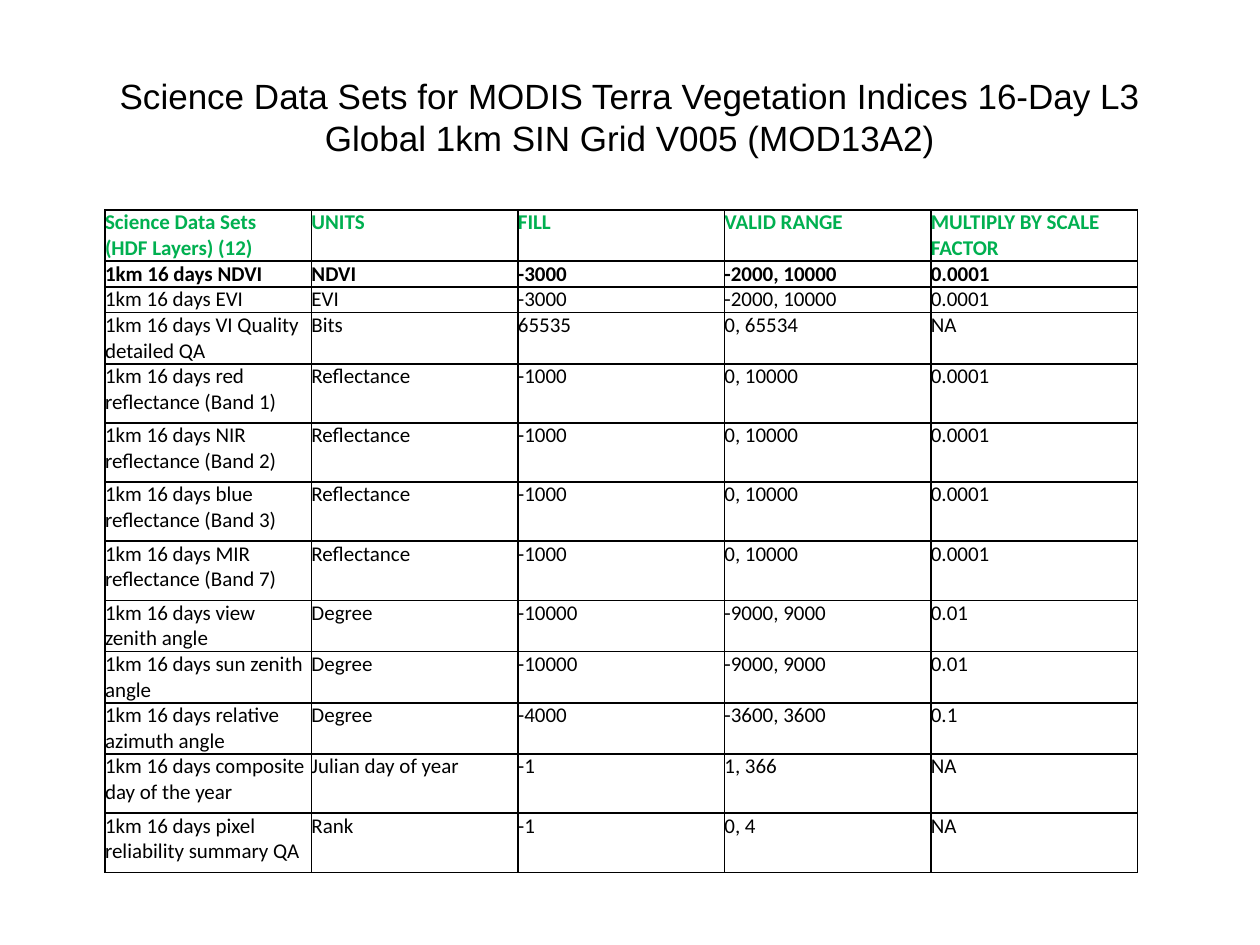
from lxml import etree
from pptx import Presentation
from pptx.dml.color import RGBColor
from pptx.enum.text import MSO_ANCHOR, PP_ALIGN
from pptx.oxml.ns import qn
from pptx.util import Pt

BLACK = RGBColor(0x00, 0x00, 0x00)
GREEN = RGBColor(0x00, 0xB0, 0x50)
LEFT, CENTER = PP_ALIGN.LEFT, PP_ALIGN.CENTER
TOP, MIDDLE = MSO_ANCHOR.TOP, MSO_ANCHOR.MIDDLE

TITLE = ("Science Data Sets for MODIS Terra Vegetation Indices 16-Day L3 "
         "Global 1km SIN Grid V005 (MOD13A2)")
HEAD = ("Science Data Sets\n(HDF Layers) (12)", "UNITS", "FILL",
        "VALID RANGE", "MULTIPLY BY SCALE FACTOR")
SHORT, MID, TALL = 14.4, 24.5, 33.8
BANDS = [(TALL, f"{name} reflectance (Band {band})", "Reflectance",
          "-1000", "0, 10000", "0.0001")
         for name, band in (("red", 1), ("NIR", 2), ("blue", 3), ("MIR", 7))]
LAYERS = [
    (SHORT, "NDVI", "NDVI", "-3000", "-2000, 10000", "0.0001"),
    (SHORT, "EVI", "EVI", "-3000", "-2000, 10000", "0.0001"),
    (MID, "VI Quality detailed QA", "Bits", "65535", "0, 65534", "NA"),
    *BANDS,
    (MID, "view zenith angle", "Degree", "-10000", "-9000, 9000", "0.01"),
    (MID, "sun zenith angle", "Degree", "-10000", "-9000, 9000", "0.01"),
    (MID, "relative azimuth angle", "Degree", "-4000", "-3600, 3600", "0.1"),
    (TALL, "composite day of the year", "Julian day of year", "-1", "1, 366", "NA"),
    (TALL, "pixel reliability summary QA", "Rank", "-1", "0, 4", "NA"),
]


def write(frame, text, font="Calibri", size=12, color=BLACK, bold=False, align=LEFT):
    para = frame.paragraphs[0]
    para.text = text
    para.alignment = align
    for gap in para._p.findall(qn("a:br")):
        etree.SubElement(gap, qn("a:rPr"), sz=str(size * 100))
    for run in para.runs:
        run.font.name = font
        run.font.size = Pt(size)
        run.font.bold = bold
        run.font.color.rgb = color


class Sheet:
    def __init__(self, deck, line=1):
        self.slide = deck.slides.add_slide(deck.slide_layouts[5])
        self.line = line

    def title(self, text, x, y, w, h):
        box = self.slide.shapes.title
        box.left, box.top, box.width, box.height = map(Pt, (x, y, w, h))
        box.text_frame.vertical_anchor = MIDDLE
        write(box.text_frame, text, font="Arial", size=20, align=CENTER)

    def border(self, cell):
        props = cell._tc.get_or_add_tcPr()
        for place, side in enumerate(("lnL", "lnR", "lnT", "lnB")):
            edge = etree.Element(qn(f"a:{side}"), w=str(Pt(self.line)))
            fill = etree.SubElement(edge, qn("a:solidFill"))
            etree.SubElement(fill, qn("a:srgbClr"), val=str(BLACK))
            props.insert(place, edge)

    def cell(self, cell, text, **style):
        cell.margin_left = cell.margin_right = 0
        cell.margin_top = cell.margin_bottom = 0
        cell.vertical_anchor = TOP
        cell.fill.background()
        self.border(cell)
        write(cell.text_frame, text, **style)

    def table(self, rows, tall, styles, x, y, w):
        count = len(rows[0])
        grid = self.slide.shapes.add_table(
            len(rows), count, Pt(x), Pt(y), Pt(w), Pt(sum(tall))).table
        grid.first_row = grid.horz_banding = False
        for col in grid.columns:
            col.width = Pt(w / count)
        for r, (row, high, style) in enumerate(zip(rows, tall, styles)):
            grid.rows[r].height = Pt(high)
            for c, text in enumerate(row):
                self.cell(grid.cell(r, c), text, **style)


def main():
    deck = Presentation()
    deck.slide_width, deck.slide_height = Pt(720), Pt(540)
    sheet = Sheet(deck)
    sheet.title(TITLE, 36, 21.6, 648, 90)
    rows = [HEAD] + [(f"1km 16 days {name}", *rest) for _, name, *rest in LAYERS]
    tall = [28.8] + [layer[0] for layer in LAYERS]
    styles = [{"color": GREEN, "bold": True}, {"bold": True}]
    styles += [{}] * (len(rows) - len(styles))
    sheet.table(rows, tall, styles, 60, 120, 590)
    deck.save("out.pptx")


if __name__ == "__main__":
    main()
